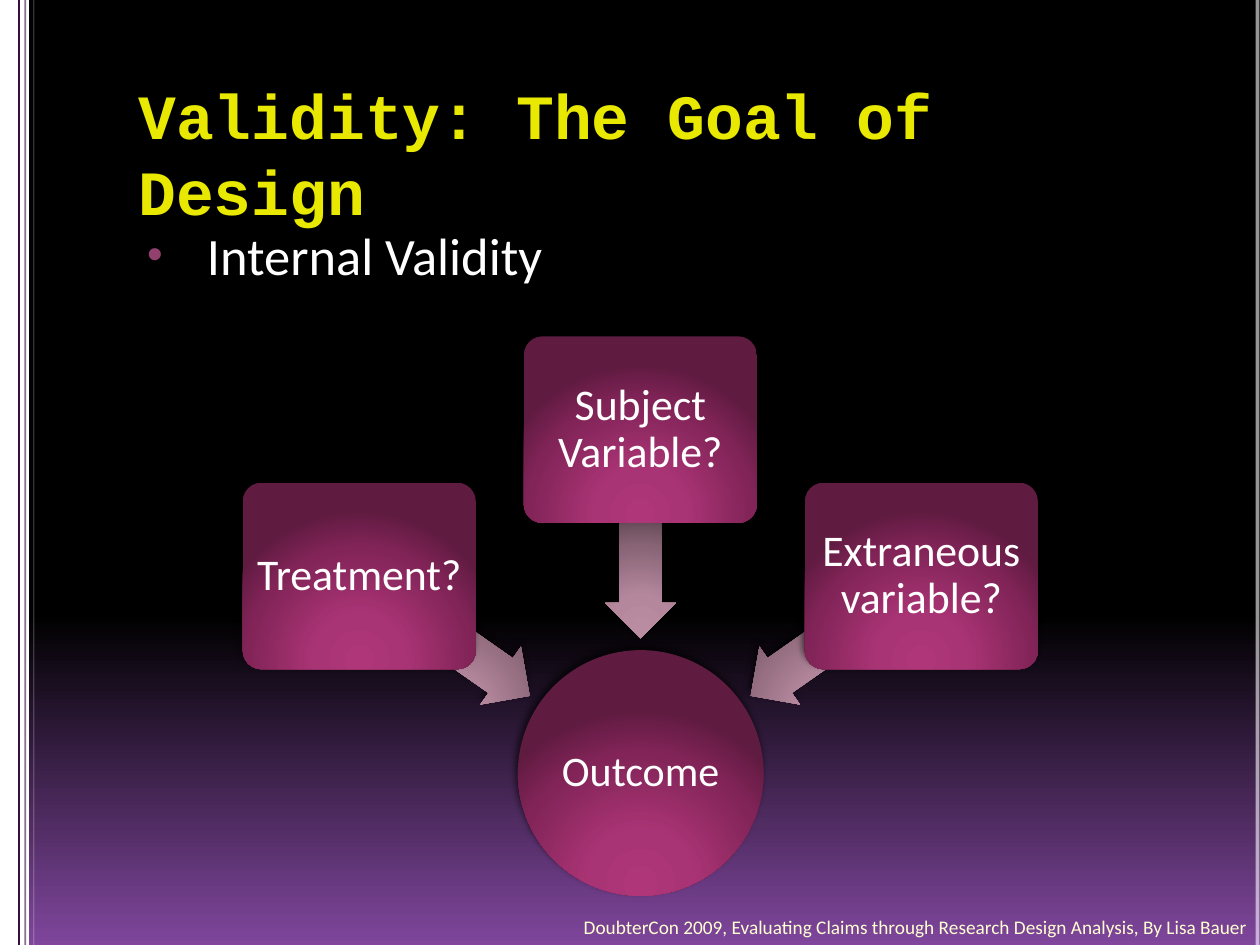
from typing import NamedTuple

from pptx import Presentation
from pptx.dml.color import RGBColor
from pptx.enum.shapes import MSO_CONNECTOR, MSO_SHAPE
from pptx.enum.text import MSO_ANCHOR, PP_ALIGN
from pptx.oxml import parse_xml
from pptx.oxml.ns import nsdecls, qn
from pptx.util import Pt

WHITE = RGBColor(0xFF, 0xFF, 0xFF)
BLACK = RGBColor(0x00, 0x00, 0x00)
INDIGO = RGBColor(0x34, 0x0F, 0x40)
PURPLE = RGBColor(0x7F, 0x46, 0x9C)
YELLOW = RGBColor(0xE8, 0xE8, 0x00)
CREAM = RGBColor(0xFF, 0xFF, 0xD2)
PLUM = RGBColor(0x92, 0x40, 0x6E)

Stops = list[tuple[int, RGBColor]]
NIGHT: Stops = [(0, BLACK), (65, BLACK), (100, PURPLE)]
BERRY: Stops = [(0, RGBColor(0xAF, 0x36, 0x79)), (30, RGBColor(0xA9, 0x34, 0x75)),
                (75, RGBColor(0x82, 0x24, 0x58)), (100, RGBColor(0x60, 0x1B, 0x41))]
ROSE: Stops = [(0, RGBColor(0xBA, 0x8C, 0xA2)), (30, RGBColor(0xB4, 0x87, 0x9D)),
               (75, RGBColor(0x88, 0x64, 0x75)), (100, RGBColor(0x65, 0x4A, 0x57))]
DOWN = '<a:lin ang="5400000" scaled="0"/>'
GLOW = ('<a:path path="circle"><a:fillToRect l="50000" t="100000" '
        'r="50000" b="10000"/></a:path>')
SHADE = (f'<a:effectLst {nsdecls("a")}><a:outerShdw blurRad="50800" dist="38100" '
         'dir="14700000" algn="t" rotWithShape="0"><a:srgbClr val="000000">'
         '<a:alpha val="60000"/></a:srgbClr></a:outerShdw></a:effectLst>')


class Area(NamedTuple):
    left: float
    top: float
    width: float
    height: float

    def points(self):
        return [Pt(value) for value in self]


class Rule(NamedTuple):
    x: float
    color: RGBColor
    width: float
    alpha: int


class Cause(NamedTuple):
    text: str
    left: float
    top: float
    arrow: tuple[float, float]
    turn: int


RULES = [Rule(10.8, INDIGO, 1, 100), Rule(14.4, INDIGO, 1, 59),
         Rule(19.4, WHITE, 0.25, 59), Rule(718.6, WHITE, 2.25, 59)]
CAUSES = [Cause("Treatment?", 138.7, 275.8, (194.6, 343.4), 215),
          Cause("Subject Variable?", 299.3, 192.2, (306.7, 285.1), 270),
          Cause("Extraneous variable?", 459.9, 275.8, (418.3, 343.4), 325)]


def assign(target, values: dict):
    for name, value in values.items():
        setattr(target, name, value)


def blend(node, stops: Stops, form: str):
    """Swap the first solid fill below node for a gradient."""
    marks = "".join(f'<a:gs pos="{at * 1000}"><a:srgbClr val="{color}"/></a:gs>'
                    for at, color in stops)
    solid = node.find(".//" + qn("a:solidFill"))
    solid.getparent().replace(solid, parse_xml(
        f'<a:gradFill {nsdecls("a")} rotWithShape="1"><a:gsLst>{marks}</a:gsLst>{form}</a:gradFill>'))


def write(shape, text: str, size: float, color: RGBColor, frame: dict,
          style: dict, face: dict):
    box = shape.text_frame
    assign(box, {"word_wrap": True, **frame})
    para = box.paragraphs[0]
    assign(para, style)
    run = para.add_run()
    run.text = text
    assign(run.font, {"name": "Calibri", "size": Pt(size), **face})
    run.font.color.rgb = color
    return para


def label(slide, area: Area, *words):
    return write(slide.shapes.add_textbox(*area.points()), *words)


def block(slide, kind, area: Area):
    shape = slide.shapes.add_shape(kind, *area.points())
    shape.shadow.inherit = False
    shape.fill.solid()
    shape.fill.fore_color.rgb = WHITE
    shape.line.fill.background()
    return shape


def glow(slide, kind, area: Area, stops: Stops):
    """Draw a shape with a round gradient and a soft shadow."""
    shape = block(slide, kind, area)
    props = shape.element.spPr
    blend(props, stops, GLOW)
    plain = props.find(qn("a:effectLst"))
    props.replace(plain, parse_xml(SHADE))
    return shape


def caption(shape, text: str, size: float, inset: float):
    sides = ("left", "top", "right", "bottom")
    frame = {f"margin_{side}": Pt(inset) for side in sides}
    write(shape, text, size, WHITE, {"vertical_anchor": MSO_ANCHOR.MIDDLE, **frame},
          {"alignment": PP_ALIGN.CENTER, "line_spacing": 0.9}, {})


def stripe(slide, rule: Rule):
    line = slide.shapes.add_connector(
        MSO_CONNECTOR.STRAIGHT, Pt(rule.x), Pt(0), Pt(rule.x), Pt(540))
    line.line.width = Pt(rule.width)
    line.line.color.rgb = rule.color
    props = line.element.spPr
    if rule.alpha < 100:
        props.find(".//" + qn("a:srgbClr")).append(
            parse_xml(f'<a:alpha {nsdecls("a")} val="{rule.alpha * 1000}"/>'))
    props.append(parse_xml(f'<a:effectLst {nsdecls("a")}/>'))


def bullet(para):
    props = para._p.get_or_add_pPr()
    for name, value in {"marL": Pt(32.4), "indent": Pt(-27.4)}.items():
        props.set(name, str(int(value)))
    for tag in (f'buClr {nsdecls("a")}><a:srgbClr val="{PLUM}"/></a:buClr',
                f'buSzPct {nsdecls("a")} val="85000"/',
                f'buFont {nsdecls("a")} typeface="Arial"/',
                f'buChar {nsdecls("a")} char="•"/'):
        props.append(parse_xml(f"<a:{tag}>"))


def chart(slide):
    """Draw the outcome and the causes that lead to it."""
    disc = glow(slide, MSO_SHAPE.OVAL, Area(295.9, 371.5, 140.4, 140.4), BERRY)
    caption(disc, "Outcome", 24, 1.4)
    for cause in CAUSES:
        arrow = glow(slide, MSO_SHAPE.LEFT_ARROW, Area(*cause.arrow, 118.8, 40.3), ROSE)
        arrow.adjustments[0] = 0.6
        arrow.rotation = cause.turn
        card = glow(slide, MSO_SHAPE.ROUNDED_RECTANGLE,
                    Area(cause.left, cause.top, 133.2, 106.6), BERRY)
        card.adjustments[0] = 0.1
        caption(card, cause.text, 25, 1)


def main():
    deck = Presentation()
    assign(deck, {"slide_width": Pt(720), "slide_height": Pt(540)})
    slide = deck.slides.add_slide(deck.slide_layouts[6])
    slide.background.fill.solid()
    blend(slide.element, NIGHT, DOWN)
    block(slide, MSO_SHAPE.RECTANGLE, Area(0, 0, 16.6, 540))
    for rule in RULES:
        stripe(slide, rule)
    label(slide, Area(72, 40.3, 612, 72), "Validity: The Goal of Design", 36, YELLOW,
          {}, {}, {"name": "Courier New", "bold": True})
    bullet(label(slide, Area(72, 123.8, 612, 376.6), " Internal Validity", 30, WHITE,
                 {}, {"space_before": Pt(7)}, {}))
    chart(slide)
    label(slide, Area(282.2, 511.2, 437.8, 28.8),
          "DoubterCon 2009, Evaluating Claims through Research Design Analysis, By Lisa Bauer",
          11, CREAM, {"vertical_anchor": MSO_ANCHOR.BOTTOM},
          {"alignment": PP_ALIGN.RIGHT}, {})
    deck.save("out.pptx")


if __name__ == "__main__":
    main()
